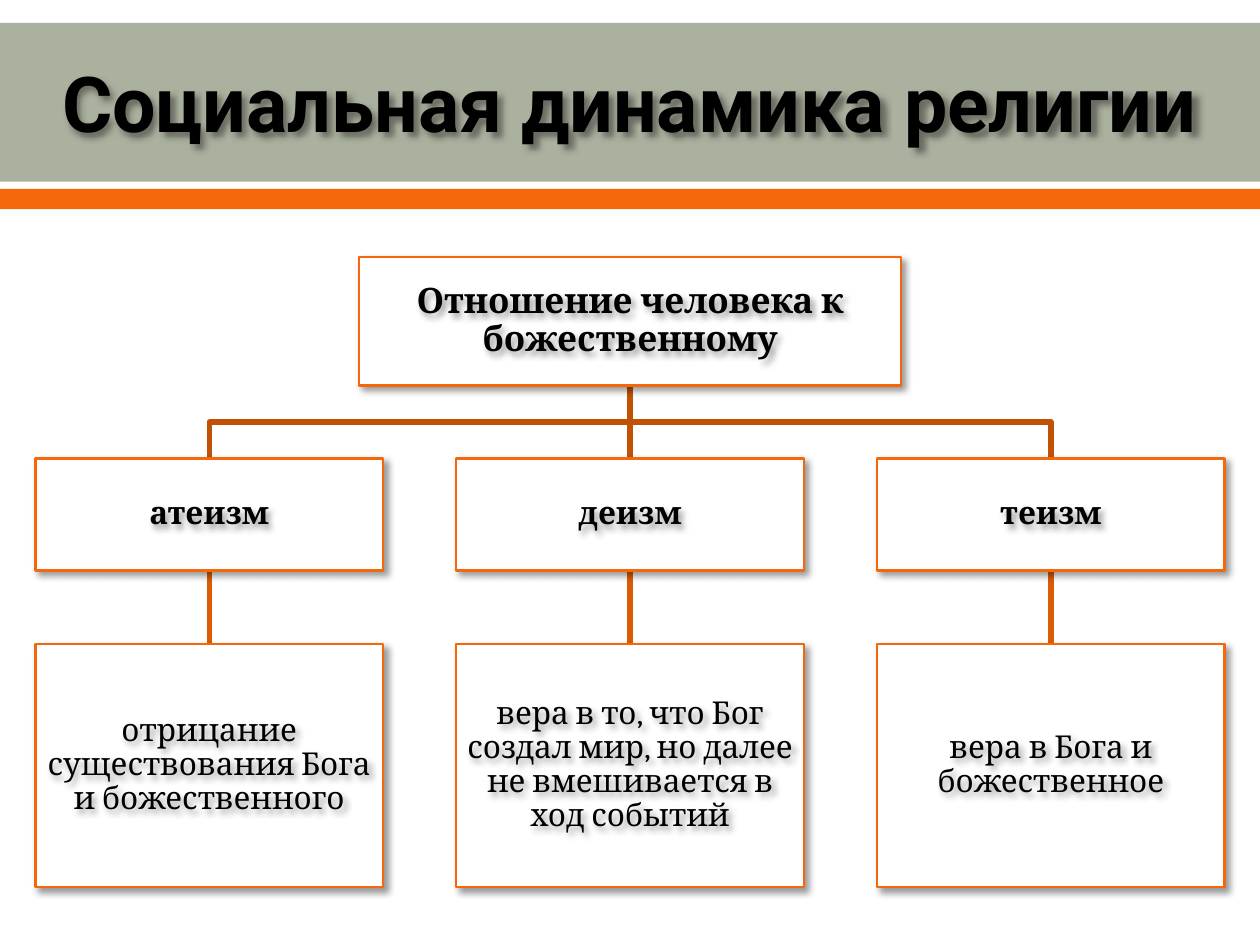
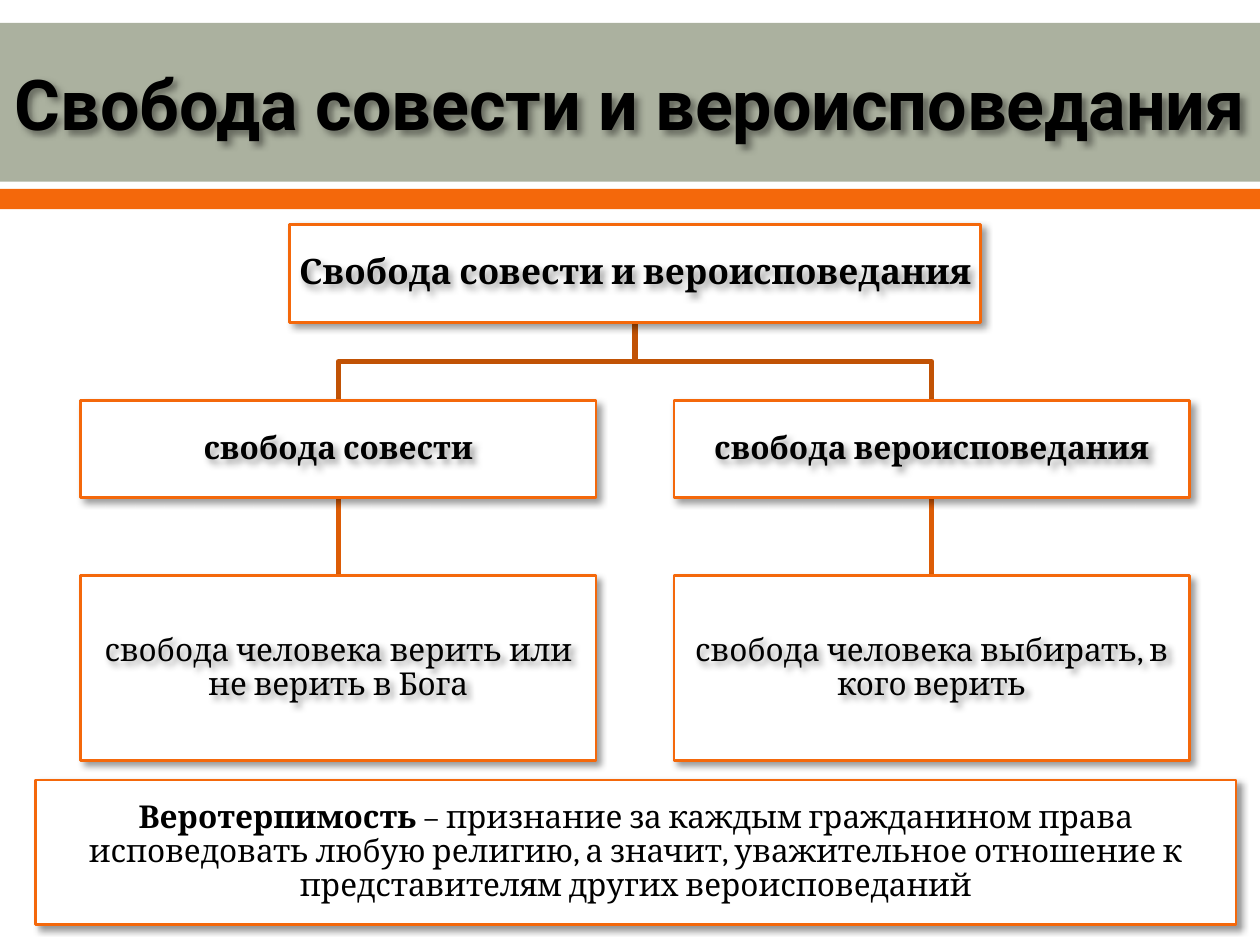
"""Builds two slides of tree diagrams on attitudes to religion."""
from pptx import Presentation
from pptx.dml.color import RGBColor
from pptx.enum.shapes import MSO_CONNECTOR, MSO_SHAPE
from pptx.enum.text import MSO_ANCHOR, MSO_AUTO_SIZE, PP_ALIGN
from pptx.oxml import parse_xml
from pptx.oxml.ns import nsdecls
from pptx.oxml.xmlchemy import OxmlElement
from pptx.util import Pt

RECTANGLE = MSO_SHAPE.RECTANGLE
STRAIGHT = MSO_CONNECTOR.STRAIGHT
MIDDLE = MSO_ANCHOR.MIDDLE
NO_AUTOFIT = MSO_AUTO_SIZE.NONE
CENTER = PP_ALIGN.CENTER

SLIDE_WIDTH, SLIDE_HEIGHT = 720, 540
TITLE_FONT, BODY_FONT = "Roboto", "Cambria"
INK, PAPER, SAGE, ORANGE = "000000", "FFFFFF", "ABB19F", "F4680B"
BRANCH, STEM = "C15205", "DC5C06"
BANDS = [(13, 90.8, SAGE), (108, 11.5, ORANGE)]
TITLE_AREA = (0, 14.4, SLIDE_WIDTH, 87.8)
ROOT_SIZE, NODE_SIZE = 20, 18

SLIDES = [
    {
        "title": "Социальная динамика религии",
        "title_size": 44,
        "root": "Отношение человека к божественному",
        "branches": [
            ("атеизм", "отрицание существования Бога и божественного"),
            ("деизм", "вера в то, что Бог создал мир, но далее не вмешивается в ход событий"),
            ("теизм", "вера в Бога и божественное"),
        ],
        "left": 20.2, "top": 146.9, "gap": 41.8,
        "root_width": 309.6, "branch_width": 198.7,
        "heights": (73.4, 64.1, 139),
    },
    {
        "title": "Свобода совести и вероисповедания",
        "title_size": 40,
        "root": "Свобода совести и вероисповедания",
        "branches": [
            ("свобода совести", "свобода человека верить или не верить в Бога"),
            ("свобода вероисповедания", "свобода человека выбирать, в кого верить"),
        ],
        "left": 46.1, "top": 128.2, "gap": 44.6,
        "root_width": 394.6, "branch_width": 294.5,
        "heights": (56.2, 55.4, 105.8),
        "footnote": (
            "Веротерпимость",
            " – признание за каждым гражданином права исповедовать любую религию, "
            "а значит, уважительное отношение к представителям других вероисповеданий",
        ),
    },
]
FOOTNOTE_AREA = (20.2, 445.7, 686.2, 82.8)


def color(hex_code):
    """Return the colour for a hex string."""
    return RGBColor.from_string(hex_code)


def points(*lengths):
    """Convert lengths in points."""
    return [Pt(length) for length in lengths]


def cast_shadow(shape):
    """Give a shape a soft shadow; an unfilled one passes it to its text."""
    shape.shadow.inherit = False
    shape.element.spPr.find("{*}effectLst").append(parse_xml(
        f'<a:outerShdw {nsdecls("a")} blurRad="{Pt(4)}" dist="{Pt(3)}" dir="2700000" '
        f'algn="tl" rotWithShape="0"><a:srgbClr val="{INK}"><a:alpha val="40000"/>'
        '</a:srgbClr></a:outerShdw>'))


def write(shape, runs, size, font_name=BODY_FONT, margins=(0.9, 0.9), spacing=0.9):
    """Write centred (text, bold) runs into a shape."""
    frame = shape.text_frame
    frame.word_wrap = True
    frame.auto_size = NO_AUTOFIT
    frame.vertical_anchor = MIDDLE
    frame.margin_left = frame.margin_right = Pt(margins[0])
    frame.margin_top = frame.margin_bottom = Pt(margins[1])
    paragraph = frame.paragraphs[0]
    paragraph.alignment = CENTER
    paragraph.line_spacing = spacing
    paragraph.font.name = font_name
    paragraph.font.size = Pt(size)
    paragraph.font.color.rgb = color(INK)
    for text, bold in runs:
        run = paragraph.add_run()
        run.text = text
        run.font.name = font_name
        run.font.size = Pt(size)
        run.font.bold = bold
        run.font.color.rgb = color(INK)


def add_band(slide, top, height, fill):
    """Add a full-width band."""
    band = slide.shapes.add_shape(RECTANGLE, *points(0, top, SLIDE_WIDTH, height))
    band.fill.solid()
    band.fill.fore_color.rgb = color(fill)
    band.line.fill.background()
    band.shadow.inherit = False
    return band


def add_card(slide, area):
    """Add a white card with an orange outline."""
    card = slide.shapes.add_shape(RECTANGLE, *points(*area))
    card.fill.solid()
    card.fill.fore_color.rgb = color(PAPER)
    card.line.color.rgb = color(ORANGE)
    card.line.width = Pt(1.5)
    cast_shadow(card)
    return card


def add_node(slide, area, text, size, bold):
    """Add a card with a shadowed label over it."""
    add_card(slide, area)
    label = slide.shapes.add_textbox(*points(*area))
    write(label, [(text, bold)], size)
    cast_shadow(label)


def add_link(slide, start, end, hex_code):
    """Link two points by a straight line or by an elbow at half height."""
    (x1, y1), (x2, y2) = start, end
    if abs(x1 - x2) < 0.01:
        link = slide.shapes.add_connector(STRAIGHT, *points(x1, y1, x2, y2))
    else:
        bend = (y1 + y2) / 2
        outline = slide.shapes.build_freeform(*points(x1, y1))
        corners = [points(x1, bend), points(x2, bend), points(x2, y2)]
        outline.add_line_segments(corners, close=False)
        link = outline.convert_to_shape()
        link.fill.background()
    link.line.color.rgb = color(hex_code)
    link.line.width = Pt(3)
    if link.element.spPr.find("{*}effectLst") is None:
        link.element.spPr.append(OxmlElement("a:effectLst"))


def add_tree(slide, content):
    """Add a root, its branches and their definitions, evenly spaced."""
    left, gap, width = content["left"], content["gap"], content["branch_width"]
    root_height, branch_height, definition_height = content["heights"]
    root_top = content["top"]
    root_bottom = root_top + root_height
    branch_top = root_bottom + gap
    branch_bottom = branch_top + branch_height
    definition_top = branch_bottom + gap
    branches = content["branches"]
    lefts = [left + index * (width + gap) for index in range(len(branches))]
    center = (lefts[0] + lefts[-1] + width) / 2

    for branch_left in lefts:
        middle = branch_left + width / 2
        add_link(slide, (middle, branch_bottom), (middle, definition_top), STEM)
        add_link(slide, (center, root_bottom), (middle, branch_top), BRANCH)

    root_width = content["root_width"]
    root_area = (center - root_width / 2, root_top, root_width, root_height)
    add_node(slide, root_area, content["root"], ROOT_SIZE, True)
    for branch_left, (branch, definition) in zip(lefts, branches):
        add_node(slide, (branch_left, branch_top, width, branch_height), branch, NODE_SIZE, True)
        add_node(slide, (branch_left, definition_top, width, definition_height),
                 definition, NODE_SIZE, False)


def add_title(slide, text, size):
    """Place and format the slide title."""
    title = slide.shapes.title
    title.left, title.top, title.width, title.height = points(*TITLE_AREA)
    write(title, [(text, True)], size, TITLE_FONT, (7.2, 3.6), 1.0)
    cast_shadow(title)


def main():
    """Build and save the presentation."""
    deck = Presentation()
    deck.slide_width, deck.slide_height = points(SLIDE_WIDTH, SLIDE_HEIGHT)
    layout = deck.slide_layouts.get_by_name("Title Only")
    for number, content in enumerate(SLIDES):
        slide = deck.slides.add_slide(layout)
        if number == 0:
            for band in BANDS:
                layout.shapes.element.insert(2, add_band(slide, *band).element)
        add_title(slide, content["title"], content["title_size"])
        add_tree(slide, content)
        if "footnote" in content:
            term, meaning = content["footnote"]
            write(add_card(slide, FOOTNOTE_AREA), [(term, True), (meaning, False)], NODE_SIZE)
    deck.save("out.pptx")


if __name__ == "__main__":
    main()
